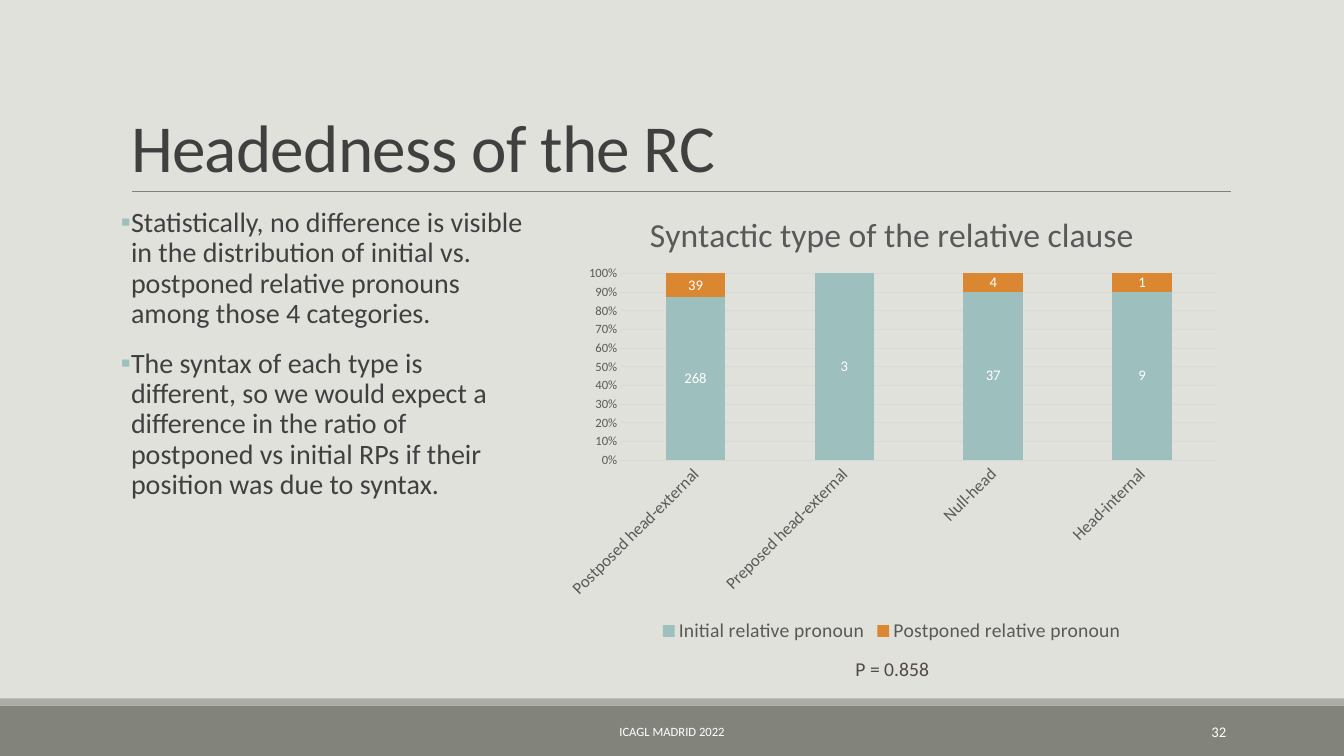
from dataclasses import dataclass

from lxml.etree import SubElement
from pptx import Presentation
from pptx.chart.data import CategoryChartData
from pptx.dml.color import RGBColor
from pptx.enum.chart import XL_CHART_TYPE as ChartType, XL_LABEL_POSITION as LabelPosition
from pptx.enum.chart import XL_LEGEND_POSITION as LegendPosition, XL_TICK_MARK as TickMark
from pptx.enum.shapes import MSO_CONNECTOR as Connector, MSO_SHAPE as Shape
from pptx.enum.text import MSO_ANCHOR as Anchor, MSO_AUTO_SIZE as AutoSize, PP_ALIGN as Align
from pptx.oxml import parse_xml
from pptx.oxml.ns import nsdecls, qn
from pptx.util import Inches, Pt


@dataclass(frozen=True)
class Theme:
    font: str = "Calibri"
    background: str = "E1E1DB"
    footer_bar: str = "82847C"
    footer_edge: str = "ACADA8"
    rule: str = "808080"
    text: str = "404040"
    chart_text: str = "595959"
    note: str = "514949"
    grid: str = "D9D9D9"
    initial: str = "9DBFBE"
    postponed: str = "DB8631"
    white: str = "FFFFFF"
    title_size: float = 48
    chart_title_size: float = 24
    body_size: float = 20
    note_size: float = 14
    category_size: float = 12
    label_size: float = 10.5
    small_size: float = 9


theme = Theme()


def style(font, size, color):
    font.name = theme.font
    font.size = Pt(size)
    font.bold = False
    font.color.rgb = RGBColor.from_string(color)


def add_text(slide, box, paragraphs, size, color, align, anchor=Anchor.TOP):
    shape = slide.shapes.add_textbox(*map(Inches, box))
    frame = shape.text_frame
    frame.word_wrap = True
    frame.vertical_anchor = anchor
    frame.text = "\n".join(paragraphs)
    for paragraph in frame.paragraphs:
        paragraph.alignment = align
        style(paragraph.font, size, color)
    return frame


presentation = Presentation()
presentation.slide_width = Inches(13.33)
presentation.slide_height = Inches(7.5)
slide = presentation.slides.add_slide(presentation.slide_layouts[5])
slide.background.fill.solid()
slide.background.fill.fore_color.rgb = RGBColor.from_string(theme.background)

for top, height, color in [(7, 0.5, theme.footer_bar), (6.93, 0.07, theme.footer_edge)]:
    bar = slide.shapes.add_shape(Shape.RECTANGLE, 0, Inches(top), Inches(13.33), Inches(height))
    bar.shadow.inherit = False
    bar.fill.solid()
    bar.fill.fore_color.rgb = RGBColor.from_string(color)
    bar.line.fill.background()

rule = slide.shapes.add_connector(
    Connector.STRAIGHT, Inches(1.31), Inches(1.9), Inches(12.21), Inches(1.9))
rule.line.color.rgb = RGBColor.from_string(theme.rule)
rule.line.width = Pt(0.5)
SubElement(rule.element.spPr, qn("a:effectLst"))

title = slide.shapes.title
title.left, title.top, title.width, title.height = map(Inches, (1.2, 0.31, 11, 1.59))
title.text_frame.text = "Headedness of the RC"
title.text_frame.auto_size = AutoSize.NONE
title.text_frame.vertical_anchor = Anchor.BOTTOM
heading = title.text_frame.paragraphs[0]
heading.alignment = Align.LEFT
heading.line_spacing = 0.85
style(heading.font, theme.title_size, theme.text)
heading.runs[0].font._element.set("spc", "-50")

body = add_text(slide, (1.2, 2.02, 4.06, 4.4), [
    "Statistically, no difference is visible in the distribution of initial vs. "
    "postponed relative pronouns among those 4 categories.",
    "The syntax of each type is different, so we would expect a difference in the "
    "ratio of postponed vs initial RPs if their position was due to syntax.",
], theme.body_size, theme.text, Align.LEFT)
body.margin_left = body.margin_right = 0
for paragraph in body.paragraphs:
    paragraph.line_spacing = 0.9
    paragraph.space_before = Pt(12)
    paragraph.space_after = Pt(2)
    properties = paragraph._p.get_or_add_pPr()
    properties.set("marL", str(Inches(0.1)))
    properties.set("indent", str(-Inches(0.1)))
    bullet = [
        f'<a:buClr {nsdecls("a")}><a:srgbClr val="{theme.initial}"/></a:buClr>',
        f'<a:buFont {nsdecls("a")} typeface="{theme.font}"/>',
        f'<a:buChar {nsdecls("a")} char="▪"/>',
    ]
    for offset, xml in enumerate(bullet):
        properties.insert(3 + offset, parse_xml(xml))

data = CategoryChartData()
data.categories = ["Postposed head-external", "Preposed head-external", "Null-head", "Head-internal"]
data.add_series("Initial relative pronoun", [268, 3, 37, 9])
data.add_series("Postponed relative pronoun", [39, 0, 4, 1])
chart = slide.shapes.add_chart(
    ChartType.COLUMN_STACKED_100, *map(Inches, (5.49, 1.9, 6.71, 4.52)), data).chart
style(chart.font, theme.category_size, theme.chart_text)

chart.has_title = True
chart.chart_title.include_in_layout = False
chart.chart_title.text_frame.text = "Syntactic type of the relative clause"
style(chart.chart_title.text_frame.paragraphs[0].font, theme.chart_title_size, theme.chart_text)

chart.has_legend = True
chart.legend.position = LegendPosition.BOTTOM
chart.legend.include_in_layout = False
style(chart.legend.font, theme.note_size, theme.chart_text)

category_axis, value_axis = chart.category_axis, chart.value_axis
for axis, size in [(category_axis, theme.category_size), (value_axis, theme.small_size)]:
    axis.major_tick_mark = axis.minor_tick_mark = TickMark.NONE
    style(axis.tick_labels.font, size, theme.chart_text)
category_axis._element.txPr.bodyPr.set("rot", "-2700000")
value_axis.minimum_scale = 0
value_axis.maximum_scale = 1
value_axis.major_unit = 0.1
value_axis.tick_labels.number_format = "0%"
value_axis.tick_labels.number_format_is_linked = False
value_axis.format.line.fill.background()
for line in (category_axis.format.line, value_axis.major_gridlines.format.line):
    line.color.rgb = RGBColor.from_string(theme.grid)
    line.width = Pt(0.75)

plot = chart.plots[0]
plot.gap_width = 150
plot.overlap = 100
plot.vary_by_categories = False
for series, color in zip(plot.series, (theme.initial, theme.postponed)):
    series.format.fill.solid()
    series.format.fill.fore_color.rgb = RGBColor.from_string(color)
    labels = series.data_labels
    labels.show_value = True
    labels.position = LabelPosition.CENTER
    labels.number_format = "0;;"
    labels.number_format_is_linked = False
    style(labels.font, theme.label_size, theme.white)

plot_area = chart._chartSpace.chart.plotArea
for layout in plot_area.findall(qn("c:layout")):
    plot_area.remove(layout)
plot_area.insert(0, parse_xml(
    f'<c:layout {nsdecls("c")}><c:manualLayout><c:layoutTarget val="inner"/>'
    '<c:xMode val="edge"/><c:yMode val="edge"/><c:x val="0.1"/><c:y val="0.18"/>'
    '<c:w val="0.88"/><c:h val="0.41"/></c:manualLayout></c:layout>'))

add_text(slide, (6.21, 6.47, 5.28, 0.34), ["P = 0.858"], theme.note_size, theme.note, Align.CENTER)
add_text(slide, (4.03, 7.06, 5.27, 0.4), ["ICAGL MADRID 2022"],
         theme.small_size, theme.white, Align.CENTER, Anchor.MIDDLE)
add_text(slide, (10.83, 7.06, 1.43, 0.4), ["32"],
         theme.label_size, theme.white, Align.RIGHT, Anchor.MIDDLE)

presentation.save("out.pptx")
